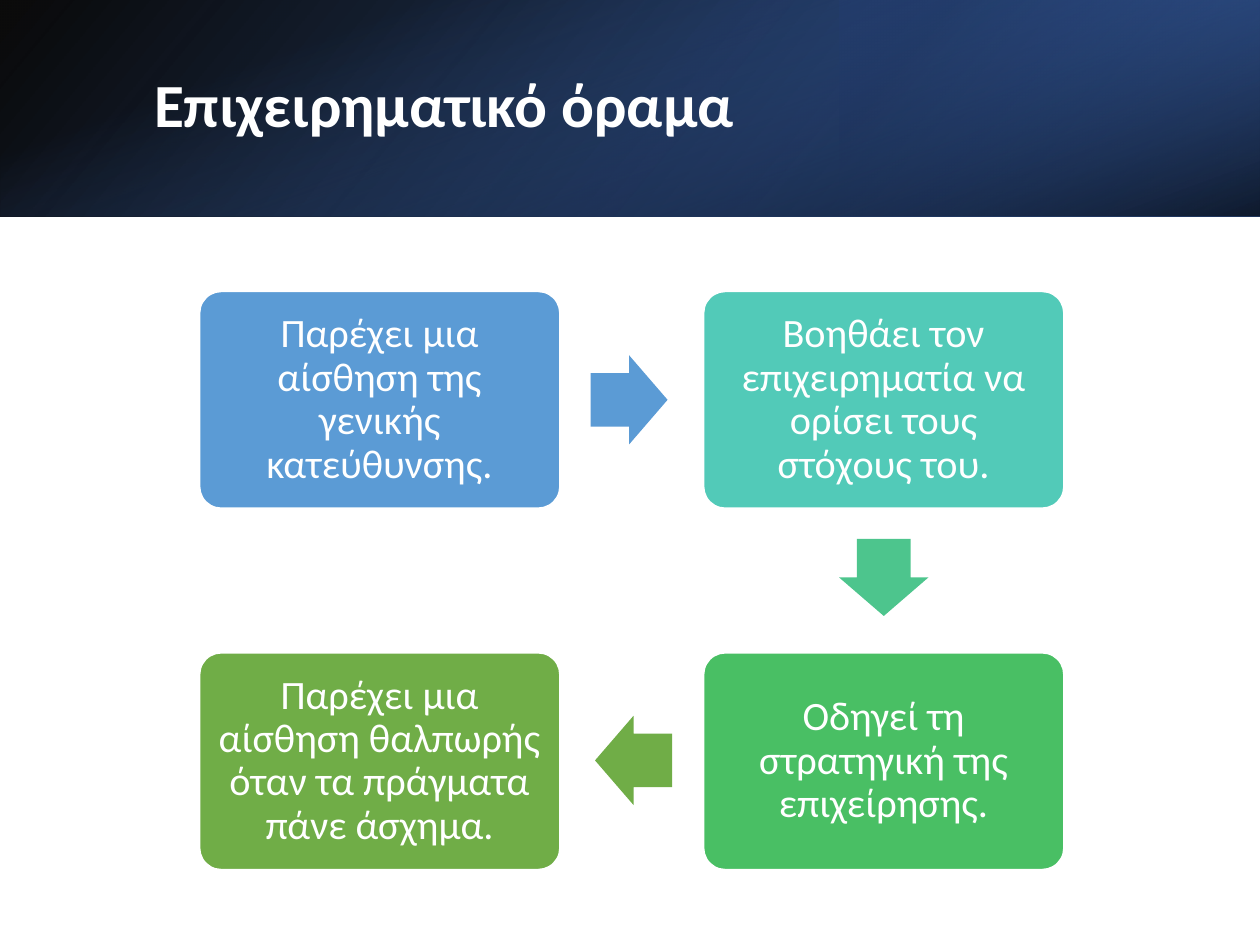
from lxml import etree
from pptx import Presentation
from pptx.dml.color import RGBColor
from pptx.enum import shapes, text
from pptx.oxml.ns import qn
from pptx.util import Pt

WHITE = RGBColor(0xFF, 0xFF, 0xFF)
BLACK = RGBColor(0, 0, 0)
NAVY = RGBColor(0x20, 0x38, 0x64)
DEEP_BLUE = RGBColor(0x2F, 0x55, 0x97)
ROYAL = RGBColor(0x44, 0x72, 0xC4)
BLUE = RGBColor(0x5B, 0x9B, 0xD5)
TEAL = RGBColor(0x52, 0xCA, 0xB8)
MINT = RGBColor(0x4D, 0xC5, 0x8D)
GREEN = RGBColor(0x49, 0xBF, 0x64)
OLIVE = RGBColor(0x70, 0xAD, 0x47)

TITLE = "Επιχειρηματικό όραμα"
# text, colour, column, row
STEPS = [
    ("Παρέχει μια αίσθηση της γενικής κατεύθυνσης.", BLUE, 0, 0),
    ("Βοηθάει τον επιχειρηματία να ορίσει τους στόχους του.", TEAL, 1, 0),
    ("Οδηγεί τη στρατηγική της επιχείρησης.", GREEN, 1, 1),
    ("Παρέχει μια αίσθηση θαλπωρής όταν τα πράγματα πάνε άσχημα.", OLIVE, 0, 1),
]
# colour, centre x, centre y, rotation
ARROWS = [(BLUE, 359.5, 228.5, 0), (MINT, 505, 330, 90), (OLIVE, 362, 434.5, 180)]

SLIDE_W, SLIDE_H, BAND_H = 720, 540, 124
# box, rotation, flipped, clockwise angle, (position, colour, opacity) stops
BAND = [
    ((0, 0, SLIDE_W, BAND_H), 0, True, 140,
     [(0, BLACK, 96), (100, DEEP_BLUE, 100)]),
    ((480, 0, 240, BAND_H), 180, True, 320,
     [(19, NAVY, 68), (100, ROYAL, 79)]),
    (((SLIDE_W - BAND_H) / 2, (BAND_H - SLIDE_W) / 2, BAND_H, SLIDE_W), 90, False, 340,
     [(23, ROYAL, 0), (99, BLACK, 74)]),
]
BOX_W, BOX_H = 206, 124
BOX_X, BOX_Y = (114, 402), (166.5, 373)
ARROW_W, ARROW_H = 44, 51


def add_shape(slide, kind, box, adjust=(), color=None, rotation=0):
    s = slide.shapes.add_shape(kind, *map(Pt, box))
    s.shadow.inherit = False
    s.line.fill.background()
    s.rotation = rotation
    for i, value in enumerate(adjust):
        s.adjustments[i] = value
    if color is not None:
        s.fill.solid()
        s.fill.fore_color.rgb = color
    return s


def add_band(slide, box, rotation, flipped, angle, stops):
    s = add_shape(slide, shapes.MSO_SHAPE.RECTANGLE, box, rotation=rotation)
    s.fill.gradient()
    s.fill.gradient_angle = 360 - angle
    for stop, (position, color, _) in zip(s.fill.gradient_stops, stops):
        stop.position = position / 100
        stop.color.rgb = color
    sp_pr = s._element.spPr
    for clr, (_, _, opacity) in zip(sp_pr.iter(qn("a:srgbClr")), stops):
        etree.SubElement(clr, qn("a:alpha")).set("val", str(opacity * 1000))
    if flipped:
        sp_pr.find(qn("a:xfrm")).set("flipH", "1")


def write(s, content, size, bold=False, align=text.PP_ALIGN.LEFT, inset=(7.2, 3.6)):
    """Fill a shape with one vertically centred white paragraph."""
    tf = s.text_frame
    tf.word_wrap = True
    tf.vertical_anchor = text.MSO_ANCHOR.MIDDLE
    tf.margin_left = tf.margin_right = Pt(inset[0])
    tf.margin_top = tf.margin_bottom = Pt(inset[1])
    p = tf.paragraphs[0]
    p.alignment = align
    p.line_spacing = 0.9
    r = p.add_run()
    r.text = content
    r.font.name = "Calibri"
    r.font.size = Pt(size)
    r.font.bold = bold
    r.font.color.rgb = WHITE


def main():
    prs = Presentation()
    prs.slide_width, prs.slide_height = Pt(SLIDE_W), Pt(SLIDE_H)
    slide = prs.slides.add_slide(prs.slide_layouts[6])

    for band in BAND:
        add_band(slide, *band)
    title = slide.shapes.add_textbox(Pt(81), Pt(27), Pt(593), Pt(69))
    write(title, TITLE, 35, bold=True)

    for content, color, col, row in STEPS:
        s = add_shape(slide, shapes.MSO_SHAPE.ROUNDED_RECTANGLE,
                      (BOX_X[col], BOX_Y[row], BOX_W, BOX_H), [0.1], color)
        s.line.color.rgb = WHITE
        s.line.width = Pt(1)
        write(s, content, 23, align=text.PP_ALIGN.CENTER, inset=(7.2, 7.2))

    for color, x, y, rotation in ARROWS:
        add_shape(slide, shapes.MSO_SHAPE.RIGHT_ARROW,
                  (x - ARROW_W / 2, y - ARROW_H / 2, ARROW_W, ARROW_H),
                  [0.6, 0.5], color, rotation)

    prs.save("out.pptx")


if __name__ == "__main__":
    main()
